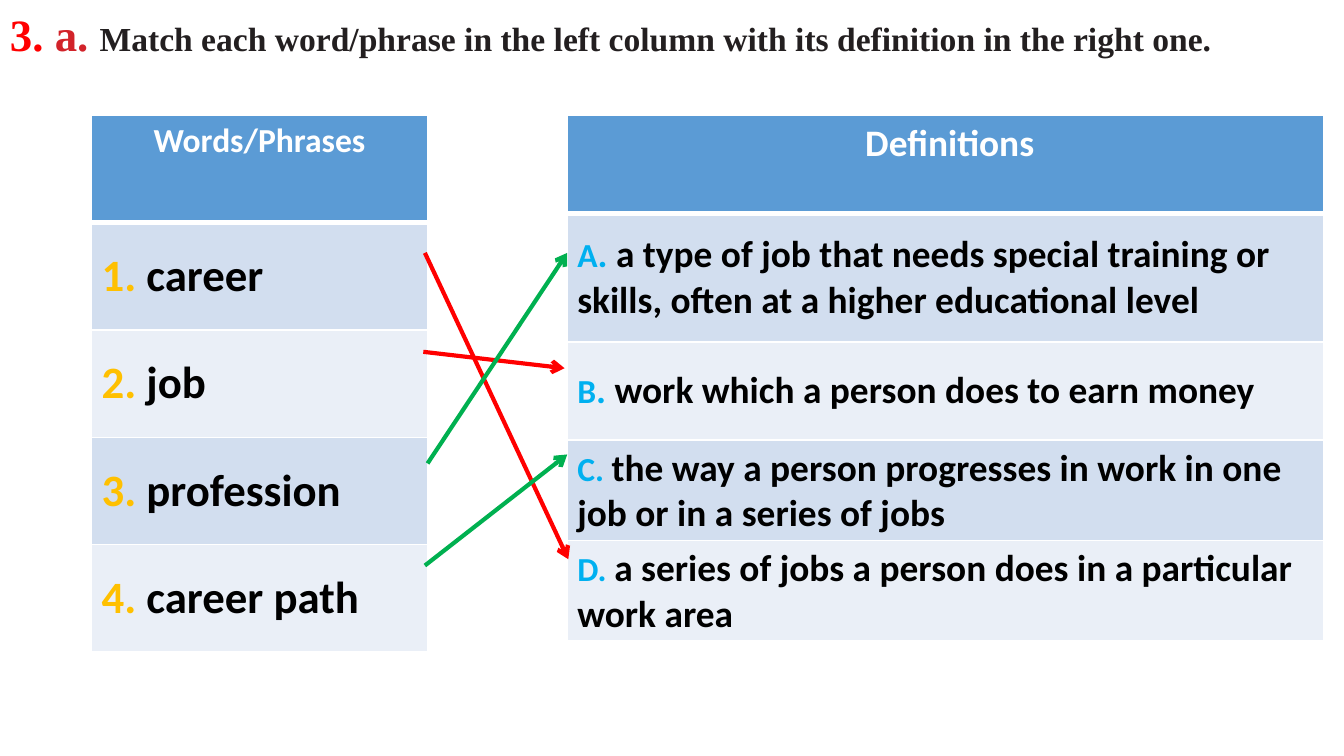
from lxml import etree
from pptx import Presentation
from pptx.dml.color import RGBColor
from pptx.enum.shapes import MSO_CONNECTOR
from pptx.enum.text import MSO_ANCHOR, PP_ALIGN
from pptx.oxml import parse_xml
from pptx.oxml.ns import nsdecls, qn
from pptx.util import Cm, Pt

LINE = MSO_CONNECTOR.STRAIGHT
TOP, MID = MSO_ANCHOR.TOP, MSO_ANCHOR.MIDDLE
LEFT, CENTER = PP_ALIGN.LEFT, PP_ALIGN.CENTER


class Theme:
    white, black, ink = "FFFFFF", "000000", "231F20"
    red, crimson, green = "FF0000", "D2232A", "00B050"
    gold, sky = "FFC000", "00B0F0"
    head, bands = "5B9BD5", ("D2DEEF", "EAEFF7")
    serif, sans = "Times New Roman", "Calibri"
    small, mid, big = 18, 20, 24
    rule, thick, arrow = 1, 3, 2.25


def write(para, face, runs):
    for text, size, color in runs:
        run = para.add_run()
        run.text = text
        style = {"name": face, "size": Pt(size), "bold": True}
        for key, val in style.items():
            setattr(run.font, key, val)
        run.font.color.rgb = RGBColor.from_string(color)


def edge(cell, sides):
    props = cell._tc.get_or_add_tcPr()
    for spot, (side, width) in enumerate(sides.items()):
        props.insert(spot, parse_xml(
            f'<a:{side} {nsdecls("a")} w="{Pt(width)}"><a:solidFill>'
            f'<a:srgbClr val="{Theme.white}"/></a:solidFill></a:{side}>'))


deck = Presentation()
deck.slide_width, deck.slide_height = Cm(25.4), Cm(14.29)
slide = deck.slides.add_slide(deck.slide_layouts[6])
shapes = slide.shapes

# Task title
frame = shapes.add_textbox(0, Cm(0.03), Cm(25.4), Cm(1.22)).text_frame
form = {"word_wrap": True, "margin_left": Cm(0.19), "margin_right": Cm(0.19),
        "margin_top": Cm(0.1), "margin_bottom": Cm(0.1)}
for key, val in form.items():
    setattr(frame, key, val)
write(frame.paragraphs[0], Theme.serif, [
    ("3. ", Theme.big, Theme.red),
    ("a. ", Theme.big, Theme.crimson),
    ("Match each word/phrase in the left column with its definition "
     "in the right one.", Theme.small, Theme.ink)])

# Table contents: each row is a list of runs
words = [[("Words/Phrases", Theme.small, Theme.white)]]
for num, word in enumerate(("career", "job", "profession", "career path"), 1):
    words.append([(f"{num}. ", Theme.big, Theme.gold),
                  (word, Theme.big, Theme.black)])

terms = [[(" Definitions", Theme.mid, Theme.white)]]
for mark, dot, text in (
        ("A", Theme.mid, "a type of job that needs special training or skills, "
                         "often at a higher educational level"),
        ("B", Theme.mid, "work which a person does to earn money"),
        ("C", Theme.small, "the way a person progresses in work in one job "
                           "or in a series of jobs"),
        ("D", Theme.small, "a series of jobs a person does in a particular "
                           "work area")):
    terms.append([(mark, Theme.small, Theme.sky), (". ", dot, Theme.sky),
                  (text, Theme.mid, Theme.black)])

# Tables
for left, width, highs, rows in (
        (1.73, 6.35, [2.03] * 5, words),
        (10.72, 14.3, [1.85, 2.44, 1.85, 1.85, 1.85], terms)):
    grid = shapes.add_table(len(rows), 1, Cm(left), Cm(2.18),
                            Cm(width), Cm(sum(highs))).table
    for row, (high, runs) in enumerate(zip(highs, rows)):
        grid.rows[row].height = Cm(high)
        cell = grid.cell(row, 0)
        form = {"margin_left": Cm(0.19), "margin_right": Cm(0.19),
                "margin_top": Cm(0.1), "margin_bottom": Cm(0.1),
                "vertical_anchor": MID if row else TOP}
        for key, val in form.items():
            setattr(cell, key, val)
        cell.fill.solid()
        tint = Theme.bands[(row - 1) % 2] if row else Theme.head
        cell.fill.fore_color.rgb = RGBColor.from_string(tint)
        edge(cell, {"lnL": Theme.rule, "lnR": Theme.rule,
                    "lnT": Theme.thick if row == 1 else Theme.rule,
                    "lnB": Theme.rule if row else Theme.thick})
        para = cell.text_frame.paragraphs[0]
        para.alignment = LEFT if row else CENTER
        write(para, Theme.sans, runs)

# Answer arrows
for x1, y1, x2, y2, color in (
        (8.03, 4.78, 10.74, 10.57, Theme.red),
        (8, 6.65, 10.67, 6.96, Theme.red),
        (8.08, 8.76, 10.72, 4.78, Theme.green),
        (8.03, 10.69, 10.72, 8.59, Theme.green)):
    link = shapes.add_connector(LINE, Cm(x1), Cm(y1), Cm(x2), Cm(y2))
    link.line.width = Pt(Theme.arrow)
    link.line.color.rgb = RGBColor.from_string(color)
    etree.SubElement(link.line._get_or_add_ln(), qn("a:tailEnd"), type="arrow")
    etree.SubElement(link._element.spPr, qn("a:effectLst"))

deck.save("out.pptx")
